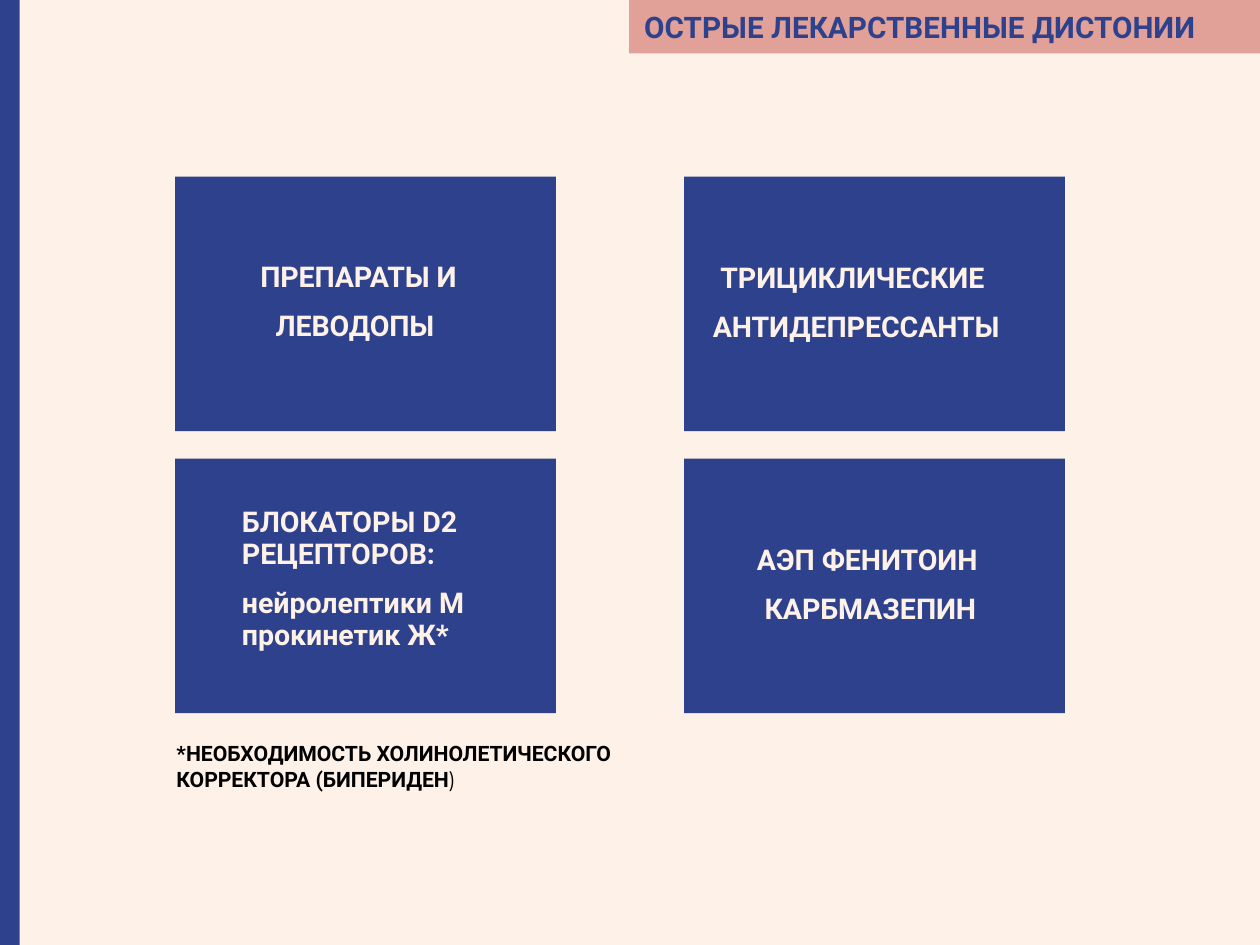
from pptx import Presentation
from pptx.dml.color import RGBColor
from pptx.enum.shapes import MSO_SHAPE
from pptx.enum.text import MSO_ANCHOR, MSO_AUTO_SIZE, PP_ALIGN
from pptx.util import Inches, Pt

COLORS = {"cream": "FEF1E8", "blue": "2E418D", "pink": "E1A198", "black": "000000"}
TITLE = "ОСТРЫЕ ЛЕКАРСТВЕННЫЕ ДИСТОНИИ"
CARDS = [
    {"cell": (0, 0), "text_at": (1.52, 1.67, 1.76, 0.64),
     "lines": [("ПРЕПАРАТЫ И", 0), ("ЛЕВОДОПЫ", 0.1)]},
    {"cell": (0, 1), "text_at": (4.49, 1.68, 2.3, 0.64),
     "lines": [("ТРИЦИКЛИЧЕСКИЕ", 0.05), ("АНТИДЕПРЕССАНТЫ", 0)]},
    {"cell": (1, 0), "text_at": (1.4, 3.28, 2.26, 1.06),
     "lines": [("БЛОКАТОРЫ D2 РЕЦЕПТОРОВ:", 0), ("нейролептики М прокинетик Ж*", 0)]},
    {"cell": (1, 1), "text_at": (4.78, 3.53, 1.93, 0.64),
     "lines": [("АЭП ФЕНИТОИН", 0), ("КАРБМАЗЕПИН", 0.05)]},
]
FOOTNOTE = "*НЕОБХОДИМОСТЬ ХОЛИНОЛЕТИЧЕСКОГО КОРРЕКТОРА (БИПЕРИДЕН"
FOOTNOTE_END = ")"

SLIDE_WIDTH, SLIDE_HEIGHT = 8.27, 6.2
CARD_LEFT, CARD_TOP = 1.15, 1.16
CARD_WIDTH, CARD_HEIGHT = 2.5, 1.67
COLUMN_STEP, ROW_STEP = 3.34, 1.85
TEXT_INDENT = 0.09


def color(name):
    return RGBColor.from_string(COLORS[name])


def add_block(slide, box, fill):
    shape = slide.shapes.add_shape(MSO_SHAPE.RECTANGLE, *map(Inches, box))
    shape.shadow.inherit = False
    shape.fill.solid()
    shape.fill.fore_color.rgb = color(fill)
    shape.line.fill.background()
    return shape


def style_run(run, size, font_color, name="Roboto", bold=True):
    run.font.size = Pt(size)
    run.font.name = name
    run.font.bold = bold
    run.font.color.rgb = color(font_color)


def add_text(slide, box, lines, size, font_color, line_spacing):
    frame = slide.shapes.add_textbox(*map(Inches, box)).text_frame
    frame.word_wrap = True
    frame.auto_size = MSO_AUTO_SIZE.SHAPE_TO_FIT_TEXT
    frame.text = "\n".join(text for text, _ in lines)
    for paragraph, (_, extra_indent) in zip(frame.paragraphs, lines):
        paragraph._p.get_or_add_pPr().set("marL", str(Inches(TEXT_INDENT + extra_indent)))
        paragraph.line_spacing = line_spacing
        paragraph.space_after = Pt(8)
        style_run(paragraph.runs[0], size, font_color)
    return frame


def add_title(slide):
    left = 4.13
    frame = add_block(slide, (left, 0, SLIDE_WIDTH - left, 0.35), "pink").text_frame
    frame.margin_left, frame.margin_top = Inches(0.1), Inches(0.02)
    frame.margin_right = frame.margin_bottom = 0
    frame.vertical_anchor = MSO_ANCHOR.MIDDLE
    frame.text = TITLE
    paragraph = frame.paragraphs[0]
    paragraph.alignment = PP_ALIGN.LEFT
    paragraph.line_spacing = 0.93
    style_run(paragraph.runs[0], 14, "blue")


def main():
    presentation = Presentation()
    presentation.slide_width = Inches(SLIDE_WIDTH)
    presentation.slide_height = Inches(SLIDE_HEIGHT)
    slide = presentation.slides.add_slide(presentation.slide_layouts[6])
    slide.background.fill.solid()
    slide.background.fill.fore_color.rgb = color("cream")

    add_block(slide, (0, 0, 0.13, SLIDE_HEIGHT), "blue")
    add_title(slide)
    for card in CARDS:
        row, column = card["cell"]
        left = CARD_LEFT + column * COLUMN_STEP
        top = CARD_TOP + row * ROW_STEP
        add_block(slide, (left, top, CARD_WIDTH, CARD_HEIGHT), "blue")
        add_text(slide, card["text_at"], card["lines"], 13.5, "cream", 0.93)

    footnote = add_text(slide, (0.97, 4.81, 3.96, 0.44), [(FOOTNOTE, 0)], 10, "black", 1.0)
    ending = footnote.paragraphs[0].add_run()
    ending.text = FOOTNOTE_END
    style_run(ending, 10, "black", "Montserrat", False)
    presentation.save("out.pptx")


if __name__ == "__main__":
    main()
